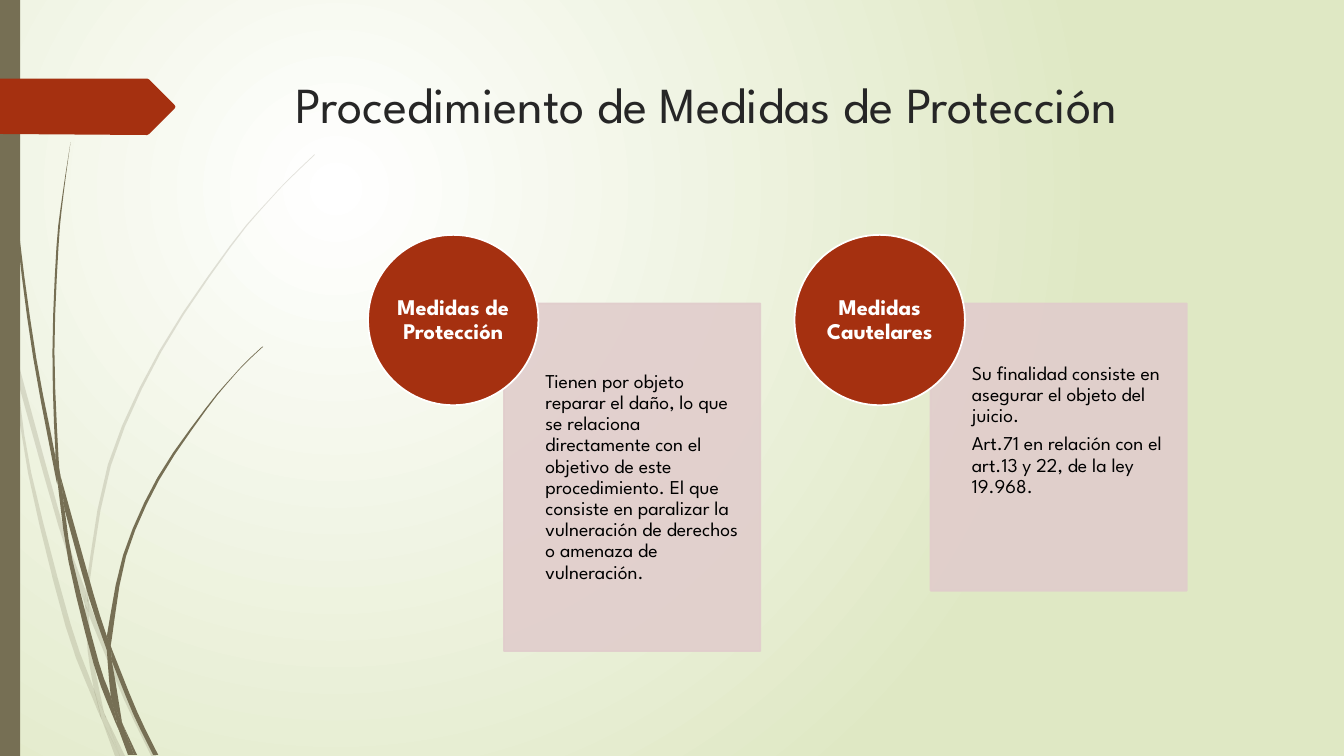
from lxml import etree
from pptx import Presentation
from pptx.dml.color import RGBColor
from pptx.enum.shapes import MSO_SHAPE as Preset
from pptx.enum.text import MSO_ANCHOR as Anchor, MSO_AUTO_SIZE as AutoSize, PP_ALIGN as Align
from pptx.oxml.ns import qn
from pptx.util import Inches, Pt

FONT = "League Spartan"
OLIVE, RUST, ROSE, WHITE = "766F54", "A53010", "E1CDCC", "FFFFFF"

# Each blade of grass: one edge from top to bottom, then the other edge from top to bottom
FAINT_BLADES = [
    ([(0, 2.82), (0.09, 3.22), (0.11, 3.5)], [(0, 2.99), (0.1, 3.44), (0.11, 3.5)]),
    ([(0.14, 3.45), (0.62, 5.2), (0.85, 5.86)], [(0.17, 3.76), (0.58, 5.22), (0.84, 5.99)]),
    ([(0.88, 5.96), (0.92, 6.07), (1.27, 6.92), (1.55, 7.5)],
     [(0.88, 6.1), (1.23, 6.94), (1.5, 7.5)]),
    ([(1.05, 7.11), (1.24, 7.5)], [(1.05, 7.11), (1.19, 7.5)]),
    ([(0.11, 3.5), (0.17, 3.76), (0.31, 4.69), (0.7, 6.19), (0.93, 6.83), (1.01, 7.14)],
     [(0.11, 3.5), (0.28, 4.7), (0.65, 6.21), (0.92, 6.93), (1.01, 7.14)]),
    ([(0.84, 5.99), (0.88, 6.1), (0.91, 6.46), (1.03, 7.06), (1.05, 7.11)],
     [(0.84, 5.99), (0.87, 6.46), (0.93, 6.83), (0.96, 6.92), (1.05, 7.11)]),
    ([(3.12, 1.53), (2.89, 1.75), (2.68, 1.97), (2.28, 2.44), (1.58, 3.48), (1.07, 4.61),
      (0.85, 5.84)],
     [(3.12, 1.54), (2.9, 1.75), (2.68, 1.98), (2.29, 2.45), (1.6, 3.49), (1.1, 4.62),
      (0.88, 5.84), (0.88, 5.96)]),
    ([(1.01, 7.14), (1.19, 7.5)], [(1.01, 7.14), (1.14, 7.5)]),
    ([(0.85, 5.86), (0.88, 5.96), (0.88, 6.1)], [(0.85, 5.86), (0.84, 5.99), (0.88, 6.08)]),
    ([(0.93, 6.83), (0.96, 6.92), (1.05, 7.11), (1.19, 7.5)],
     [(0.93, 6.83), (0.99, 7.07), (1.01, 7.14), (1.19, 7.5)]),
]
DARK_BLADES = [
    ([(0.04, 0), (0.05, 0.48), (0.08, 1.09), (0.19, 2.32), (0.36, 3.55), (0.55, 4.53),
      (0.57, 4.81)],
     [(0.03, 0), (0.04, 0.48), (0.07, 1.1), (0.17, 2.33), (0.33, 3.55), (0.56, 4.77)]),
    ([(0.6, 4.72), (0.93, 5.9), (1.06, 6.31)], [(0.64, 5.05), (0.88, 5.92), (1.06, 6.45)]),
    ([(1.1, 6.41), (1.13, 6.49), (1.36, 7.06), (1.57, 7.49)],
     [(1.11, 6.56), (1.32, 7.08), (1.52, 7.49)]),
    ([(0.57, 4.77), (0.64, 5.05), (0.72, 5.56), (0.98, 6.57), (1.1, 6.91), (1.17, 7.22)],
     [(0.57, 4.77), (0.68, 5.57), (0.93, 6.59), (1.11, 7.08), (1.17, 7.22)]),
    ([(0.7, 1.41), (0.62, 1.93), (0.56, 2.45), (0.52, 3.49), (0.55, 4.49), (0.6, 4.72)],
     [(0.7, 1.41), (0.63, 1.93), (0.58, 2.45), (0.54, 3.49), (0.58, 4.53), (0.6, 4.72)]),
    ([(1.22, 7.19), (1.36, 7.49)], [(1.22, 7.19), (1.33, 7.49)]),
    ([(0.55, 4.49), (0.6, 4.72), (0.64, 5.05)], [(0.55, 4.53), (0.57, 4.77), (0.64, 5.05)]),
    ([(2.6, 3.44), (2.45, 3.58), (2.31, 3.73), (2.04, 4.05), (1.56, 4.74), (1.22, 5.51),
      (1.06, 6.31)],
     [(2.61, 3.44), (2.45, 3.59), (2.31, 3.74), (2.05, 4.06), (1.58, 4.76), (1.25, 5.52),
      (1.11, 6.33), (1.1, 6.41)]),
    ([(1.17, 7.22), (1.31, 7.49)], [(1.17, 7.22), (1.27, 7.49)]),
    ([(1.06, 6.45), (1.11, 6.56), (1.21, 7.16), (1.22, 7.19)],
     [(1.06, 6.45), (1.1, 6.91), (1.16, 7.06), (1.22, 7.19)]),
    ([(1.06, 6.31), (1.1, 6.41), (1.11, 6.56)], [(1.06, 6.45), (1.09, 6.51), (1.11, 6.56)]),
    ([(1.1, 6.91), (1.16, 7.06), (1.22, 7.19), (1.33, 7.49)],
     [(1.1, 6.91), (1.16, 7.17), (1.17, 7.22), (1.3, 7.49)]),
]

# Heading, paragraphs, panel height, bottom inset
MEASURES = [
    ("Medidas de Protección",
     ["Tienen por objeto reparar el daño, lo que se relaciona directamente con el objetivo "
      "de este procedimiento. El que consiste en paralizar la vulneración de derechos o "
      "amenaza de vulneración."], 3.45, 0.11),
    ("Medidas Cautelares",
     ["Su finalidad consiste en asegurar el objeto del juicio.",
      "Art.71 en relación con el art.13 y 22, de la ley 19.968."], 2.85, 0.44),
]


def color(hex_code):
    return RGBColor.from_string(hex_code)


def paint_shape(shape, fill, line=None, alpha=100):
    shape.shadow.inherit = False
    shape.fill.solid()
    shape.fill.fore_color.rgb = color(fill)
    if line:
        shape.line.color.rgb = color(line)
        shape.line.width = Pt(1.25)
    else:
        shape.line.fill.background()
    if alpha < 100:
        for tint in shape.element.spPr.iter(qn("a:srgbClr")):
            etree.SubElement(tint, qn("a:alpha")).set("val", str(alpha * 1000))


def write(shape, paragraphs, size, ink, bold=False, align=Align.LEFT, anchor=Anchor.MIDDLE,
          insets=(0, 0, 0, 0), spacing=0.9, after=0):
    frame = shape.text_frame
    frame.word_wrap = True
    frame.auto_size = AutoSize.NONE
    frame.vertical_anchor = anchor
    (frame.margin_left, frame.margin_top,
     frame.margin_right, frame.margin_bottom) = map(Inches, insets)
    frame.text = "\n".join(paragraphs)
    for paragraph in frame.paragraphs:
        paragraph.alignment = align
        paragraph.line_spacing = spacing
        paragraph.space_before = Pt(0)
        paragraph.space_after = Pt(after)
        font = paragraph.font
        font.name, font.size, font.bold = FONT, Pt(size), bold
        font.color.rgb = color(ink)


def smooth(points, steps=3):
    """Points of a Catmull-Rom curve through the given points."""
    ends = [points[0], *points, points[-1]]
    curve = [points[0]]
    for a, b, c, d in zip(ends, ends[1:], ends[2:], ends[3:]):
        for t in (step / steps for step in range(1, steps + 1)):
            curve.append(tuple(
                0.5 * (2 * q + (r - p) * t + (2 * p - 5 * q + 4 * r - s) * t ** 2
                       + (3 * q - p - 3 * r + s) * t ** 3)
                for p, q, r, s in zip(a, b, c, d)))
    return curve


def add_outline(slide, points, fill, alpha=100):
    start, *rest = [(Inches(x), Inches(y)) for x, y in points]
    builder = slide.shapes.build_freeform(*start)
    builder.add_line_segments(rest, close=True)
    paint_shape(builder.convert_to_shape(), fill, alpha=alpha)


def add_background(slide):
    fill = slide.background.fill
    fill.gradient()
    for stop, tint in zip(fill.gradient_stops, (WHITE, "DFE8C4")):
        stop.color.rgb = color(tint)
    gradient = slide.element.find(".//" + qn("a:gradFill"))
    gradient.remove(gradient.find(qn("a:lin")))
    circle = etree.SubElement(gradient, qn("a:path"), path="circle")
    etree.SubElement(circle, qn("a:fillToRect"), l="50000", t="50000", r="100000", b="100000")


def add_decoration(slide):
    # Grass
    for blades, alpha in ((FAINT_BLADES, 20), (DARK_BLADES, 100)):
        for edge, other_edge in blades:
            add_outline(slide, smooth(edge) + smooth(other_edge)[::-1], OLIVE, alpha)
    # Side bar and arrow tab
    bar = slide.shapes.add_shape(Preset.RECTANGLE, 0, 0, Inches(0.2), Inches(7.5))
    paint_shape(bar, OLIVE)
    add_outline(slide, [(0, 0.78), (1.46, 0.78), (1.48, 0.79), (1.73, 1.04), (1.74, 1.06),
                        (1.73, 1.08), (1.48, 1.33), (1.46, 1.34), (0, 1.33)], RUST)


def add_title(slide, text, left, top, width, height):
    title = slide.shapes.title
    title.left, title.top, title.width, title.height = map(Inches, (left, top, width, height))
    write(title, [text], 36, "262626", anchor=Anchor.TOP, spacing=1,
          insets=(0.09, 0.05, 0.1, 0.05))


def add_measure(slide, left, top, heading, paragraphs, height, bottom_inset):
    # Text panel
    panel = slide.shapes.add_shape(Preset.RECTANGLE, Inches(left + 1.35), Inches(top + 0.68),
                                   Inches(2.54), Inches(height))
    paint_shape(panel, ROSE, ROSE, alpha=90)
    write(panel, paragraphs, 14, "000000", insets=(0.41, 0.11, 0.11, bottom_inset), after=5)
    # Heading circle over its corner
    disc = slide.shapes.add_shape(Preset.OVAL, Inches(left), Inches(top),
                                  Inches(1.69), Inches(1.69))
    paint_shape(disc, RUST, WHITE)
    write(disc, [heading], 16, WHITE, bold=True, align=Align.CENTER)


def main():
    deck = Presentation()
    deck.slide_width, deck.slide_height = Inches(13.33), Inches(7.5)
    slide = deck.slides.add_slide(deck.slide_layouts[5])
    add_background(slide)
    add_decoration(slide)
    add_title(slide, "Procedimiento de Medidas de Protección", 2.84, 0.68, 9.75, 1.4)
    for column, measure in enumerate(MEASURES):
        add_measure(slide, 3.65 + 4.23 * column, 2.33, *measure)
    deck.save("out.pptx")


if __name__ == "__main__":
    main()
